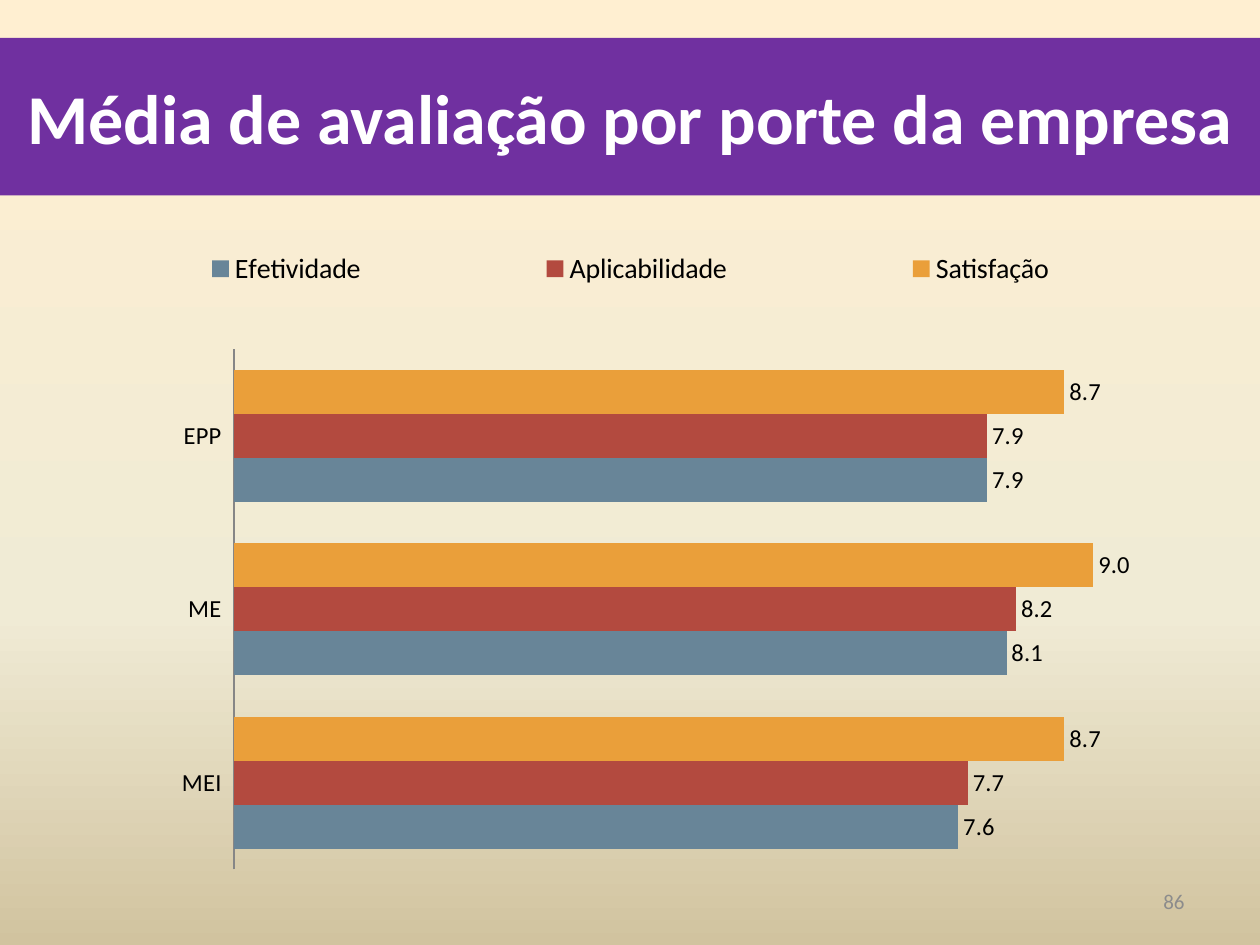
from copy import deepcopy
from typing import Any, NamedTuple

from pptx import Presentation
from pptx.chart.data import CategoryChartData
from pptx.dml.color import RGBColor
from pptx.enum.chart import XL_CHART_TYPE as ChartType
from pptx.enum.chart import XL_LABEL_POSITION as LabelPosition
from pptx.enum.chart import XL_LEGEND_POSITION as LegendPosition
from pptx.enum.chart import XL_TICK_LABEL_POSITION as TickLabelPosition
from pptx.enum.chart import XL_TICK_MARK as TickMark
from pptx.enum.text import MSO_ANCHOR as Anchor
from pptx.enum.text import MSO_AUTO_SIZE as AutoSize
from pptx.enum.text import PP_ALIGN as Align
from pptx.oxml import parse_xml
from pptx.oxml.ns import nsdecls
from pptx.util import Inches, Pt

FONT = "Calibri"
PURPLE = RGBColor(0x70, 0x30, 0xA0)
WHITE = RGBColor(0xFF, 0xFF, 0xFF)
BLACK = RGBColor(0x00, 0x00, 0x00)
GRAY = RGBColor(0x8C, 0x8C, 0x8C)
AXIS_GRAY = RGBColor(0x86, 0x86, 0x86)
ORANGE = RGBColor(0xEA, 0x9F, 0x3A)
RED = RGBColor(0xB3, 0x4A, 0x3F)
BLUE = RGBColor(0x68, 0x85, 0x98)
CREAM = RGBColor(0xFF, 0xEF, 0xD1)
SAND = RGBColor(0xF0, 0xEB, 0xD5)
TAN = RGBColor(0xD1, 0xC3, 0x9F)


class Box(NamedTuple):
    left: float
    top: float
    width: float
    height: float

    def lengths(self) -> list[int]:
        return [Inches(value) for value in self]


class Rating(NamedTuple):
    name: str
    averages: tuple[float, ...]
    color: RGBColor


SIZES = ("EPP", "ME", "MEI")
RATINGS = (
    Rating("Satisfação", (8.7, 9.0, 8.7), ORANGE),
    Rating("Aplicabilidade", (7.9, 8.2, 7.7), RED),
    Rating("Efetividade", (7.9, 8.1, 7.6), BLUE),
)
BACKGROUND_STOPS = ((0, CREAM), (0.65, SAND), (1, TAN))


def set_attributes(target: Any, values: dict[str, Any]) -> None:
    for name, value in values.items():
        setattr(target, name, value)


def format_font(font: Any, size: int, color: RGBColor, bold: bool = False) -> None:
    set_attributes(font, {"name": FONT, "size": Pt(size), "bold": bold})
    font.color.rgb = color


def fill_background(slide: Any) -> None:
    fill = slide.background.fill
    fill.gradient()
    fill.gradient_angle = 270
    stop_list = slide.element.xpath(".//a:gsLst")[0]
    while len(stop_list) < len(BACKGROUND_STOPS):
        stop_list.append(deepcopy(stop_list[-1]))
    for stop, (position, color) in zip(fill.gradient_stops, BACKGROUND_STOPS):
        stop.position = position
        stop.color.rgb = color


def write_text(shape: Any, text: str, align: Align, size: int,
               color: RGBColor, bold: bool = False) -> None:
    frame = shape.text_frame
    frame.text = text
    set_attributes(frame, {"word_wrap": True, "auto_size": AutoSize.NONE,
                           "vertical_anchor": Anchor.MIDDLE})
    paragraph = frame.paragraphs[0]
    paragraph.alignment = align
    format_font(paragraph.runs[0].font, size, color, bold)


def add_title(slide: Any, text: str, box: Box) -> None:
    title = slide.shapes.title
    set_attributes(title, dict(zip(Box._fields, box.lengths())))
    title.fill.solid()
    title.fill.fore_color.rgb = PURPLE
    write_text(title, text, Align.CENTER, 40, WHITE, True)


def manual_layout(box: Box, target: str = "") -> Any:
    modes = "".join(f'<c:{axis}Mode val="edge"/>' for axis in "xy")
    extents = "".join(f'<c:{key} val="{value}"/>' for key, value in zip("xywh", box))
    return parse_xml(f"<c:layout {nsdecls('c')}><c:manualLayout>{target}{modes}"
                     f"{extents}</c:manualLayout></c:layout>")


def place_chart_parts(chart: Any, plot_box: Box, legend_box: Box) -> None:
    plot_area = chart.element.xpath(".//c:plotArea")[0]
    legend = chart.element.xpath(".//c:legend")[0]
    for part in (plot_area, legend):
        for layout in part.xpath("./c:layout"):
            part.remove(layout)
    plot_area.insert(0, manual_layout(plot_box, '<c:layoutTarget val="inner"/>'))
    legend.xpath("./c:legendPos")[0].addnext(manual_layout(legend_box))


def format_axes(chart: Any) -> None:
    category_axis = chart.category_axis
    set_attributes(category_axis, {"reverse_order": True, "has_major_gridlines": False,
                                   "major_tick_mark": TickMark.NONE,
                                   "minor_tick_mark": TickMark.NONE,
                                   "tick_label_position": TickLabelPosition.LOW})
    category_axis.format.line.color.rgb = AXIS_GRAY
    category_axis.format.line.width = Pt(0.75)
    format_font(category_axis.tick_labels.font, 14, BLACK)
    set_attributes(chart.value_axis, {"visible": False, "has_major_gridlines": False,
                                      "minimum_scale": 0.1, "maximum_scale": 10.1})


def add_ratings_chart(slide: Any, box: Box) -> None:
    data = CategoryChartData(number_format="0.0")
    data.categories = SIZES
    for rating in RATINGS:
        data.add_series(rating.name, rating.averages)
    frame = slide.shapes.add_chart(ChartType.BAR_CLUSTERED, *box.lengths(), data)
    chart = frame.chart
    set_attributes(chart, {"has_title": False, "has_legend": True})
    format_font(chart.font, 18, BLACK)
    set_attributes(chart.legend, {"position": LegendPosition.TOP,
                                  "include_in_layout": False})
    format_font(chart.legend.font, 16, BLACK)
    format_axes(chart)
    set_attributes(chart.plots[0], {"gap_width": 95, "overlap": 0,
                                    "vary_by_categories": False})
    for series, rating in zip(chart.plots[0].series, RATINGS):
        series.format.fill.solid()
        series.format.fill.fore_color.rgb = rating.color
        labels = series.data_labels
        set_attributes(labels, {"show_value": True, "number_format": "0.0",
                                "number_format_is_linked": False,
                                "position": LabelPosition.OUTSIDE_END})
        format_font(labels.font, 14, BLACK)
    place_chart_parts(chart, Box(0.167, 0.197, 0.811, 0.761), Box(0, 0.03, 1, 0.1))


def main() -> None:
    presentation = Presentation()
    set_attributes(presentation, {"slide_width": Inches(10), "slide_height": Inches(7.5)})
    slide = presentation.slides.add_slide(presentation.slide_layouts[5])
    fill_background(slide)
    add_title(slide, "Média de avaliação por porte da empresa", Box(0, 0.3, 10, 1.25))
    add_ratings_chart(slide, Box(0.28, 1.7, 9.45, 5.43))
    page_number = slide.shapes.add_textbox(*Box(7.17, 6.95, 2.33, 0.4).lengths())
    write_text(page_number, "86", Align.RIGHT, 12, GRAY)
    presentation.save("out.pptx")


if __name__ == "__main__":
    main()
